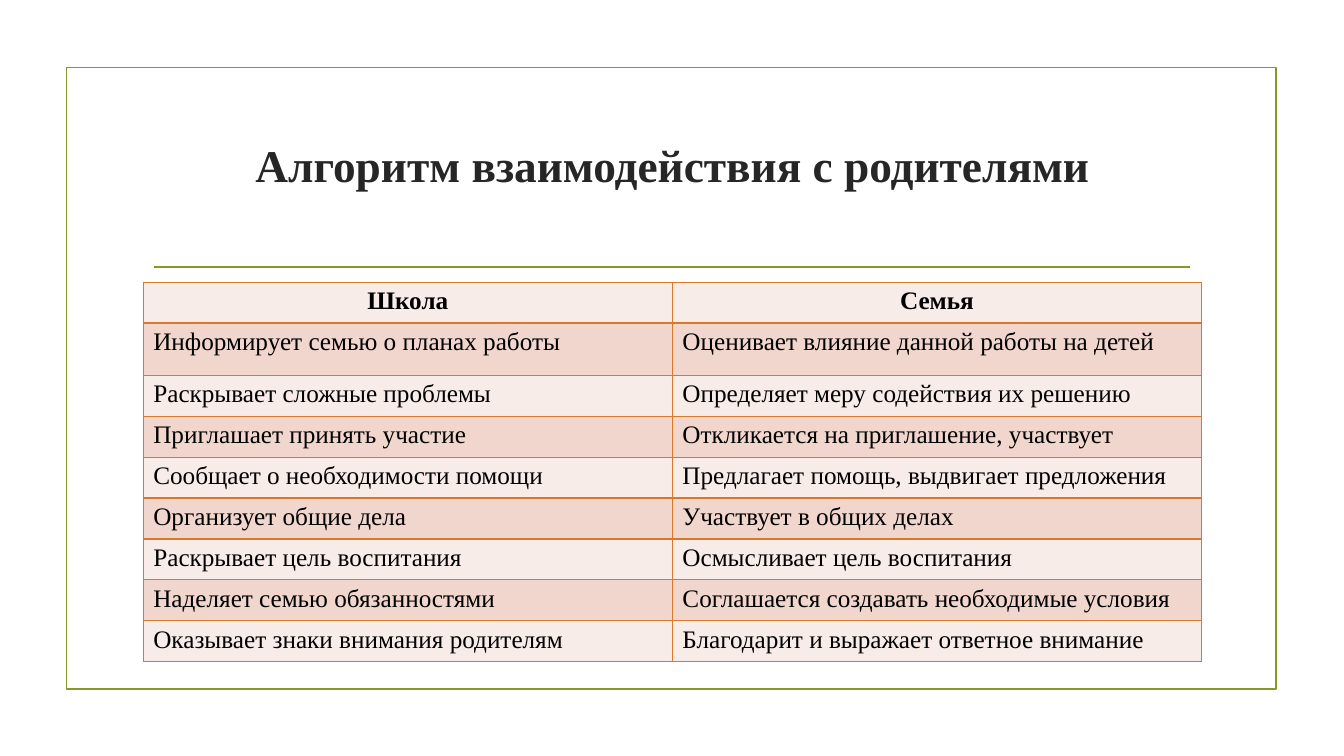
from lxml.etree import SubElement as Sub
from pptx import Presentation as Deck
from pptx.dml.color import RGBColor as Color
from pptx.enum.shapes import MSO_CONNECTOR as Link, MSO_SHAPE as Shape
from pptx.enum.text import MSO_ANCHOR as Anchor, PP_ALIGN as Align
from pptx.oxml.ns import qn
from pptx.util import Cm, Pt

GREEN = Color(0x83, 0x99, 0x2A)
ORANGE = Color(0xD9, 0x78, 0x28)
LIGHT = Color(0xF8, 0xEC, 0xE8)
DARK = Color(0xF1, 0xD6, 0xCD)
GREY = Color(0x26, 0x26, 0x26)
BLACK = Color(0, 0, 0)
FONT = "Times New Roman"
LEFT, WIDTH = Cm(3.61), Cm(26.67)
ROWS = [
    ("Школа", "Семья"),
    ("Информирует семью о планах работы", "Оценивает влияние данной работы на детей"),
    ("Раскрывает сложные проблемы", "Определяет меру содействия их решению"),
    ("Приглашает принять участие", "Откликается на приглашение, участвует"),
    ("Сообщает о необходимости помощи", "Предлагает помощь, выдвигает предложения"),
    ("Организует общие дела", "Участвует в общих делах"),
    ("Раскрывает цель воспитания", "Осмысливает цель воспитания"),
    ("Наделяет семью обязанностями", "Соглашается создавать необходимые условия"),
    ("Оказывает знаки внимания родителям", "Благодарит и выражает ответное внимание"),
]


def style(para, size, color, bold, align):
    """Format a paragraph and its runs."""
    para.alignment = align
    for run in para.runs:
        font = run.font
        font.name, font.size, font.bold = FONT, Pt(size), bold
        font.color.rgb = color


def add_frame(slide):
    """Draw the green frame around the content."""
    frame = slide.shapes.add_shape(Shape.RECTANGLE, Cm(1.68), Cm(1.7), Cm(30.48), Cm(15.67))
    frame.shadow.inherit = False
    frame.fill.background()
    frame.line.color.rgb = GREEN
    frame.line.width = Pt(1.25)


def add_rule(slide):
    """Draw the green line under the title."""
    rule = slide.shapes.add_connector(Link.STRAIGHT, Cm(3.89), Cm(6.73), Cm(30), Cm(6.73))
    rule.line.color.rgb = GREEN
    rule.line.width = Pt(1.25)
    Sub(rule._element.spPr, qn("a:effectLst"))


def set_title(slide, text):
    """Place and format the title."""
    title = slide.shapes.title
    title.left, title.top, title.width, title.height = LEFT, Cm(2.72), WIDTH, Cm(2.57)
    frame = title.text_frame
    frame.text = text
    frame.word_wrap = True
    frame.vertical_anchor = Anchor.MIDDLE
    frame.margin_top = Cm(0.38)
    style(frame.paragraphs[0], 32.4, GREY, True, Align.CENTER)


def add_edges(cell):
    """Give a cell orange borders on all sides."""
    props = cell._tc.get_or_add_tcPr()
    for side in ("a:lnL", "a:lnR", "a:lnT", "a:lnB"):
        edge = Sub(props, qn(side), w=str(Pt(1)))
        Sub(Sub(edge, qn("a:solidFill")), qn("a:srgbClr"), val=str(ORANGE))


def fill_cell(cell, text, row):
    """Write a cell and colour it by its row."""
    head = row == 0
    cell.text = text
    style(cell.text_frame.paragraphs[0], 18, BLACK, head, Align.CENTER if head else Align.LEFT)
    add_edges(cell)
    cell.fill.solid()
    cell.fill.fore_color.rgb = DARK if row % 2 else LIGHT


def add_grid(slide):
    """Add the table of school and family steps."""
    shape = slide.shapes.add_table(len(ROWS), 2, LEFT, Cm(7.11), WIDTH, Cm(9.56))
    table = shape.table
    for row, texts in enumerate(ROWS):
        table.rows[row].height = Cm(1.32 if row == 1 else 1.03)
        for col, text in enumerate(texts):
            fill_cell(table.cell(row, col), text, row)


def main():
    """Build the slide and save it."""
    deck = Deck()
    deck.slide_width, deck.slide_height = Cm(33.87), Cm(19.05)
    slide = deck.slides.add_slide(deck.slide_layouts[5])
    add_frame(slide)
    add_rule(slide)
    set_title(slide, "Алгоритм взаимодействия с родителями")
    add_grid(slide)
    deck.save("out.pptx")


if __name__ == "__main__":
    main()
